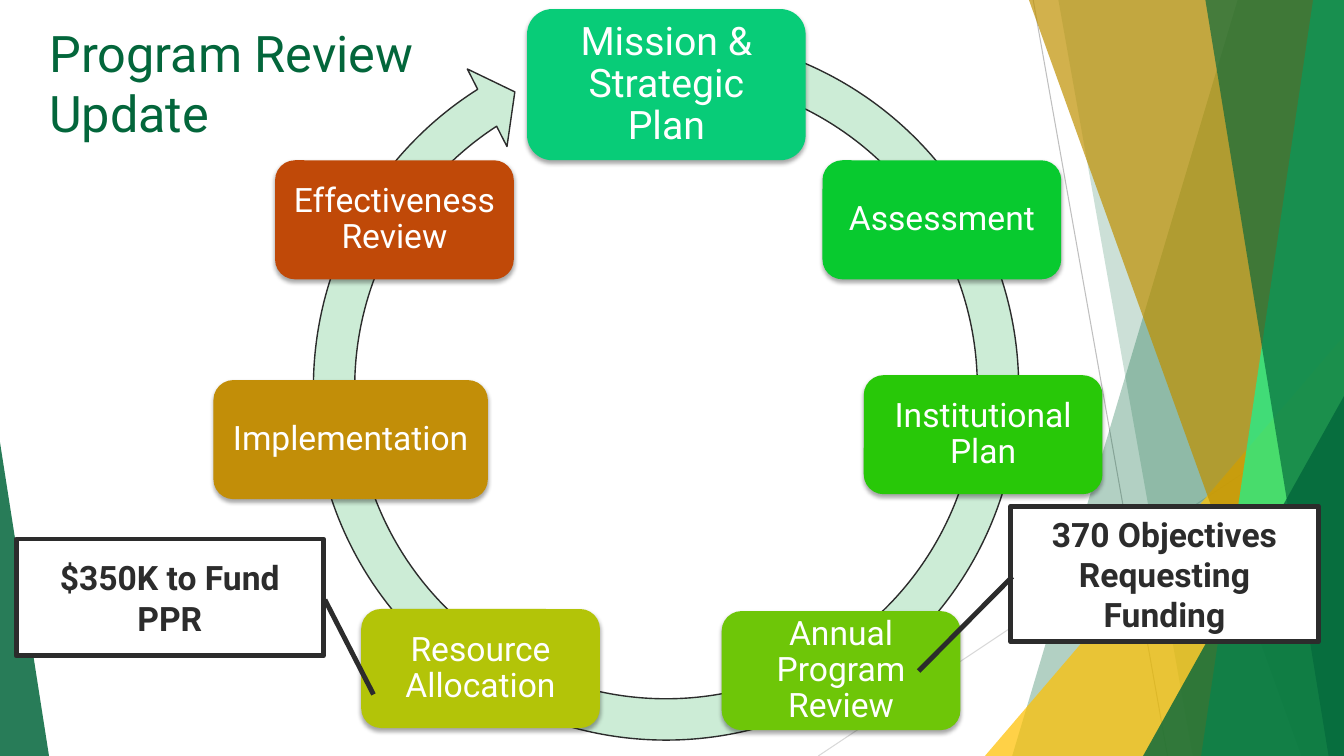
from lxml import etree
from pptx import Presentation
from pptx.dml.color import RGBColor
from pptx.enum.shapes import MSO_CONNECTOR, MSO_SHAPE
from pptx.enum.text import MSO_ANCHOR, MSO_AUTO_SIZE, PP_ALIGN
from pptx.oxml.ns import qn
from pptx.util import Pt

FONT = "Roboto"
COLORS = {
    "white": "FFFFFF", "ink": "2C2C2C", "forest": "03663B", "mint": "13F895",
    "amber": "FFC000", "ochre": "BF9000", "ring": "CCECD6",
    "gray": "BFBFBF", "light gray": "D9D9D9",
    "mission": "08CC78", "assessment": "08CA2F", "plan": "28C808",
    "program": "6EC608", "resource": "B3C408", "implementation": "C28E08",
    "effectiveness": "C04908",
}

# Boxes are (left, top, width, height) in points
SLIDE_BOX = (0, 0, 960, 540)
TITLE_BOX = (28, 12, 677, 104)
CYCLE_BOX = (152.5, 6.5, 635, 538.5)
STEP_WIDTH, STEP_HEIGHT = 170.5, 85

# Text, color, offset in the cycle box, width, height, font size, inset
STEPS = [
    ("Mission & Strategic Plan", "mission", 224, 0, 199, 108, 28, 9),
    ("Assessment", "assessment", 435, 108, STEP_WIDTH, STEP_HEIGHT, 24, 7),
    ("Institutional Plan", "plan", 464.5, 261.5, STEP_WIDTH, STEP_HEIGHT, 24, 7),
    ("Annual Program Review", "program", 363, 430, STEP_WIDTH, STEP_HEIGHT, 24, 7),
    ("Resource Allocation", "resource", 105.5, 428.5, STEP_WIDTH, STEP_HEIGHT, 24, 7),
    ("Implementation", "implementation", 0, 265, 196, STEP_HEIGHT, 24, 7),
    ("Effectiveness Review", "effectiveness", 44, 108, STEP_WIDTH, STEP_HEIGHT, 24, 7),
]

# Text, box, pointer as start y, start x, end y, end x in fractions of the box
CALLOUTS = [
    ("$350K to Fund PPR", (11.5, 385, 219.5, 83.5), (0.52, 1.005, 1.33, 1.163)),
    ("370 Objectives Requesting Funding", (722, 361.5, 219.5, 97),
     (0.52, 0.005, 1.215, -0.3)),
]


def rgb(name):
    return RGBColor.from_string(COLORS[name])


def paint(shape, fill, opacity=100, line=None, line_width=1):
    shape.shadow.inherit = False
    shape.fill.solid()
    shape.fill.fore_color.rgb = rgb(fill)
    if opacity < 100:
        color = shape.fill._xPr.find(qn("a:solidFill"))[0]
        etree.SubElement(color, qn("a:alpha"), val=str(opacity * 1000))
    if line:
        shape.line.color.rgb = rgb(line)
        shape.line.width = Pt(line_width)
    else:
        shape.line.fill.background()


def add_soft_shadow(shape):
    effects = shape._element.spPr.find(qn("a:effectLst"))
    shadow = etree.SubElement(effects, qn("a:outerShdw"), blurRad=str(Pt(3)),
                              dist=str(Pt(2)), dir="5400000", rotWithShape="0")
    color = etree.SubElement(shadow, qn("a:srgbClr"), val="000000")
    etree.SubElement(color, qn("a:alpha"), val="35000")


def add_shape(slide, kind, box, adjustments=()):
    shape = slide.shapes.add_shape(kind, *map(Pt, box))
    for index, value in enumerate(adjustments):
        shape.adjustments[index] = value
    return shape


def write(shape, text, size, color, bold=False, spacing=1.0):
    frame = shape.text_frame
    frame.word_wrap = True
    frame.vertical_anchor = MSO_ANCHOR.MIDDLE
    frame.text = text
    paragraph = frame.paragraphs[0]
    paragraph.alignment = PP_ALIGN.CENTER
    paragraph.line_spacing = spacing
    paragraph.font.name = FONT
    paragraph.font.size = Pt(size)
    paragraph.font.bold = bold
    paragraph.font.color.rgb = rgb(color)
    return frame


def add_backdrop(slide, box):
    left, top, width, height = box
    right, bottom = left + width, top + height

    def add_hairline(start, end, color):
        line = slide.shapes.add_connector(
            MSO_CONNECTOR.STRAIGHT, *map(Pt, (*start, *end)))
        line.line.color.rgb = rgb(color)
        line.line.width = Pt(0.75)
        etree.SubElement(line._element.spPr, qn("a:effectLst"))

    def add_band(top_x, bottom_x, color, opacity):
        """Fill from a slanted edge to the right side of the box."""
        builder = slide.shapes.build_freeform(Pt(left + top_x), Pt(top), scale=1.0)
        corners = [(right, top), (right, bottom), (left + bottom_x, bottom)]
        builder.add_line_segments([(Pt(x), Pt(y)) for x, y in corners], close=True)
        paint(builder.convert_to_shape(), color, opacity)

    def add_corner(x, corner_width, corner_height, apex, color, opacity):
        triangle = add_shape(
            slide, MSO_SHAPE.ISOSCELES_TRIANGLE,
            (x, bottom - corner_height, corner_width, corner_height), [apex])
        paint(triangle, color, opacity)

    add_hairline((left + 738, top), (left + 834, bottom), "gray")
    add_hairline((right, top + 290), (left + 584.5, bottom), "light gray")
    add_band(884, 723, "forest", 30)
    add_band(756, 852, "forest", 20)
    add_corner(right - 256.5, 256.5, 300, 1, "amber", 72)
    add_band(735, 929.5, "ochre", 70)
    add_band(938, 858, "mint", 70)
    add_band(861, 949, "forest", 65)
    add_corner(right - 143.5, 143.5, 257, 1, "forest", 80)
    add_corner(left, 35, 224, 0, "forest", 85)


def set_title(slide, box):
    title = slide.shapes.title
    title.left, title.top, title.width, title.height = map(Pt, box)
    frame = write(title, "Program Review \vUpdate", 36, "forest")
    frame.auto_size = MSO_AUTO_SIZE.NONE
    frame.vertical_anchor = MSO_ANCHOR.TOP
    frame.paragraphs[0].alignment = PP_ALIGN.LEFT


def add_cycle(slide, box):
    left, top = box[:2]
    ring = add_shape(slide, MSO_SHAPE.CIRCULAR_ARROW,
                     (left + 55, top + 2, 536.5, 536.5),
                     (0.055, 3.307, 142.439, 171.073, 0.058))
    paint(ring, "ring", line="ink")
    for text, color, x, y, width, height, size, inset in STEPS:
        step = add_shape(slide, MSO_SHAPE.ROUNDED_RECTANGLE,
                         (left + x, top + y, width, height))
        paint(step, color)
        add_soft_shadow(step)
        frame = write(step, text, size, "white", spacing=0.9)
        frame.margin_left = frame.margin_right = Pt(inset)
        frame.margin_top = frame.margin_bottom = Pt(inset)


def add_callout(slide, text, box, pointer):
    callout = add_shape(slide, MSO_SHAPE.LINE_CALLOUT_1, box, pointer)
    paint(callout, "white", line="ink", line_width=3.5)
    write(callout, text, 24, "ink", bold=True)


def main():
    presentation = Presentation()
    presentation.slide_width, presentation.slide_height = map(Pt, SLIDE_BOX[2:])
    slide = presentation.slides.add_slide(presentation.slide_layouts[5])
    add_backdrop(slide, SLIDE_BOX)
    set_title(slide, TITLE_BOX)
    add_cycle(slide, CYCLE_BOX)
    for text, box, pointer in CALLOUTS:
        add_callout(slide, text, box, pointer)
    presentation.save("out.pptx")


if __name__ == "__main__":
    main()
